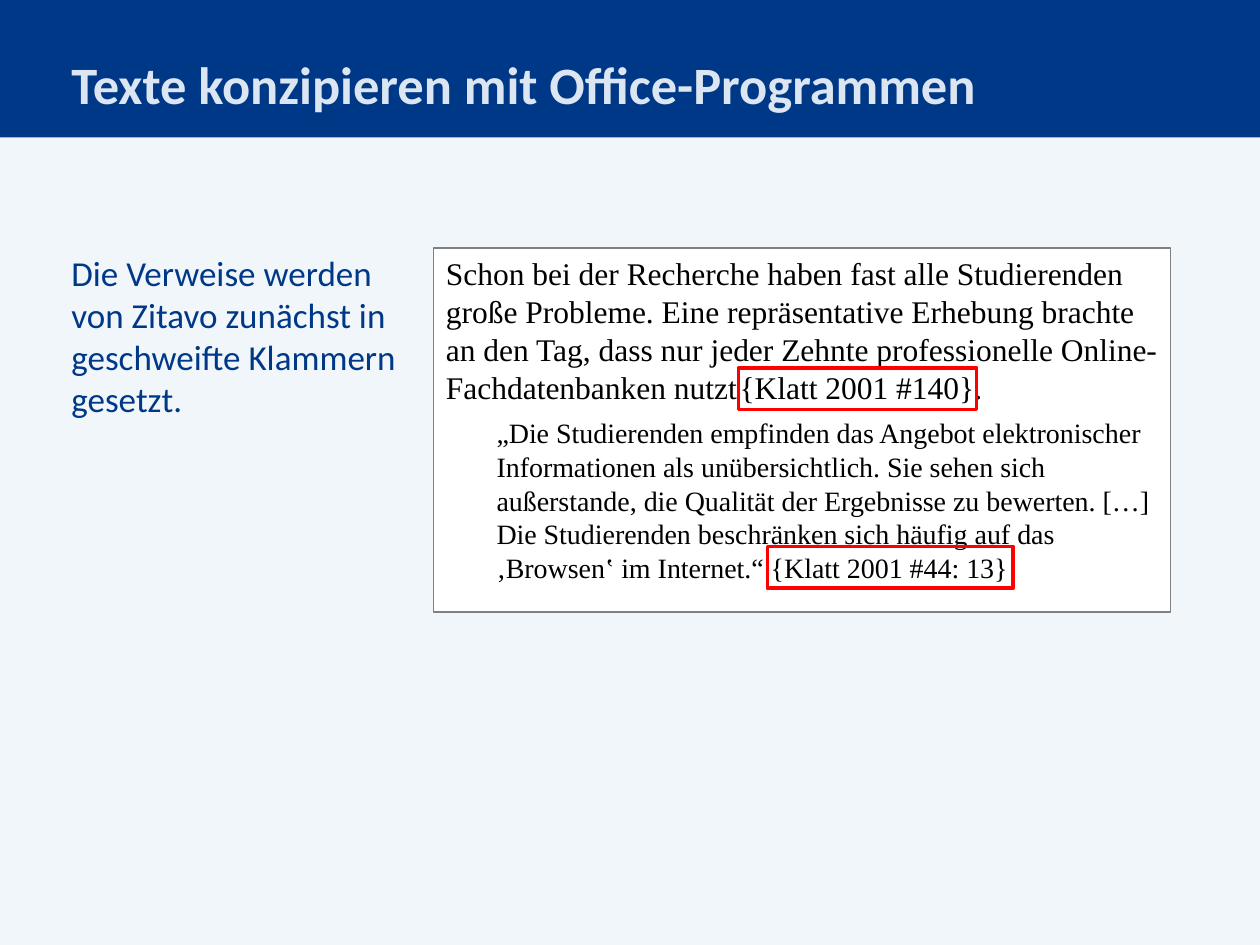
from pptx import Presentation
from pptx import util as u
from pptx.dml.color import RGBColor
from pptx.enum import shapes, text

BLUE = RGBColor(0x00, 0x38, 0x88)
PALE = RGBColor(0xF1, 0xF6, 0xFB)
TITLE = RGBColor(0xDC, 0xE6, 0xF2)
WHITE = RGBColor(0xFF, 0xFF, 0xFF)
BLACK = RGBColor(0x00, 0x00, 0x00)
GREY = RGBColor(0x80, 0x80, 0x80)
RED = RGBColor(0xFF, 0x00, 0x00)
SANS, SERIF = "Calibri", "Times New Roman"


def add_rect(slide, x, y, w, h, fill=None, line=None, weight=0.75):
    """Draw a flat rectangle; lengths are in centimetres."""
    sp = slide.shapes.add_shape(
        shapes.MSO_SHAPE.RECTANGLE, u.Cm(x), u.Cm(y), u.Cm(w), u.Cm(h))
    sp.shadow.inherit = False
    if fill is None:
        sp.fill.background()
    else:
        sp.fill.solid()
        sp.fill.fore_color.rgb = fill
    if line is None:
        sp.line.fill.background()
    else:
        sp.line.color.rgb = line
        sp.line.width = u.Pt(weight)
    return sp


def add_text_box(slide, x, y, w, h, anchor=text.MSO_ANCHOR.TOP):
    """Add a wrapping text box and return its text frame."""
    tf = slide.shapes.add_textbox(u.Cm(x), u.Cm(y), u.Cm(w), u.Cm(h)).text_frame
    tf.word_wrap = True
    tf.vertical_anchor = anchor
    return tf


def write(p, words, size, font=SERIF, color=BLACK, bold=False, indent=0, before=0):
    """Write one formatted, left-aligned paragraph."""
    p.alignment = text.PP_ALIGN.LEFT
    if indent:
        p.level = 1
        p._p.get_or_add_pPr().set("marL", str(u.Cm(indent)))
    if before:
        p.space_before = u.Pt(before)
    r = p.add_run()
    r.text = words
    r.font.size, r.font.name, r.font.bold = u.Pt(size), font, bold
    r.font.color.rgb = color


def add_header(slide, x, y, w, h):
    """Draw the title band with its heading."""
    add_rect(slide, x, y, w, h, fill=BLUE)
    tf = add_text_box(slide, x + 1.19, y + 0.79, w - 2.54, 1.78,
                      anchor=text.MSO_ANCHOR.MIDDLE)
    write(tf.paragraphs[0], "Texte konzipieren mit Office-Programmen",
          30, font=SANS, color=TITLE, bold=True)


def add_explanation(slide, x, y, w, h):
    """Place the explanatory note."""
    tf = add_text_box(slide, x, y, w, h)
    write(tf.paragraphs[0],
          "Die Verweise werden von Zitavo zunächst in geschweifte Klammern gesetzt.",
          20, font=SANS, color=BLUE)


def add_sample(slide, x, y, w, h):
    """Place the sample document and frame its two references."""
    tf = add_rect(slide, x, y, w, h, fill=WHITE, line=GREY).text_frame
    tf.word_wrap = True
    tf.vertical_anchor = text.MSO_ANCHOR.TOP
    write(tf.paragraphs[0],
          "Schon bei der Recherche haben fast alle Studierenden große Probleme. "
          "Eine repräsentative Erhebung brachte an den Tag, dass nur jeder Zehnte "
          "professionelle Online-Fachdatenbanken nutzt", 18)
    write(tf.add_paragraph(),
          "„Die Studierenden empfinden das Angebot elektronischer Informationen als "
          "unübersichtlich. Sie sehen sich außerstande, die Qualität der Ergebnisse "
          "zu bewerten. […] Die Studierenden beschränken sich häufig auf das "
          "‚Browsen‛ im Internet.“ {Klatt 2001 #44: 13}", 16, indent=1.02, before=6)

    tf = add_text_box(slide, x + 6.17, y + 2.42, 5.26, 0.76,
                      anchor=text.MSO_ANCHOR.MIDDLE)
    tf.margin_left = tf.margin_right = tf.margin_top = tf.margin_bottom = 0
    write(tf.paragraphs[0], "{Klatt 2001 #140}.", 18)

    for dx, dy, width in ((6.15, 2.42, 4.8), (6.73, 6.02, 4.95)):
        add_rect(slide, x + dx, y + dy, width, 0.84, line=RED, weight=2)


def main():
    """Build and save the slide."""
    prs = Presentation()
    prs.slide_width, prs.slide_height = u.Cm(25.4), u.Cm(19.05)
    s = prs.slides.add_slide(prs.slide_layouts[6])
    s.background.fill.solid()
    s.background.fill.fore_color.rgb = PALE
    add_header(s, 0, 0, 25.4, 2.77)
    add_sample(s, 8.74, 5, 14.86, 7.34)
    add_explanation(s, 1.19, 4.95, 7.54, 3.68)
    prs.save("out.pptx")


if __name__ == "__main__":
    main()
